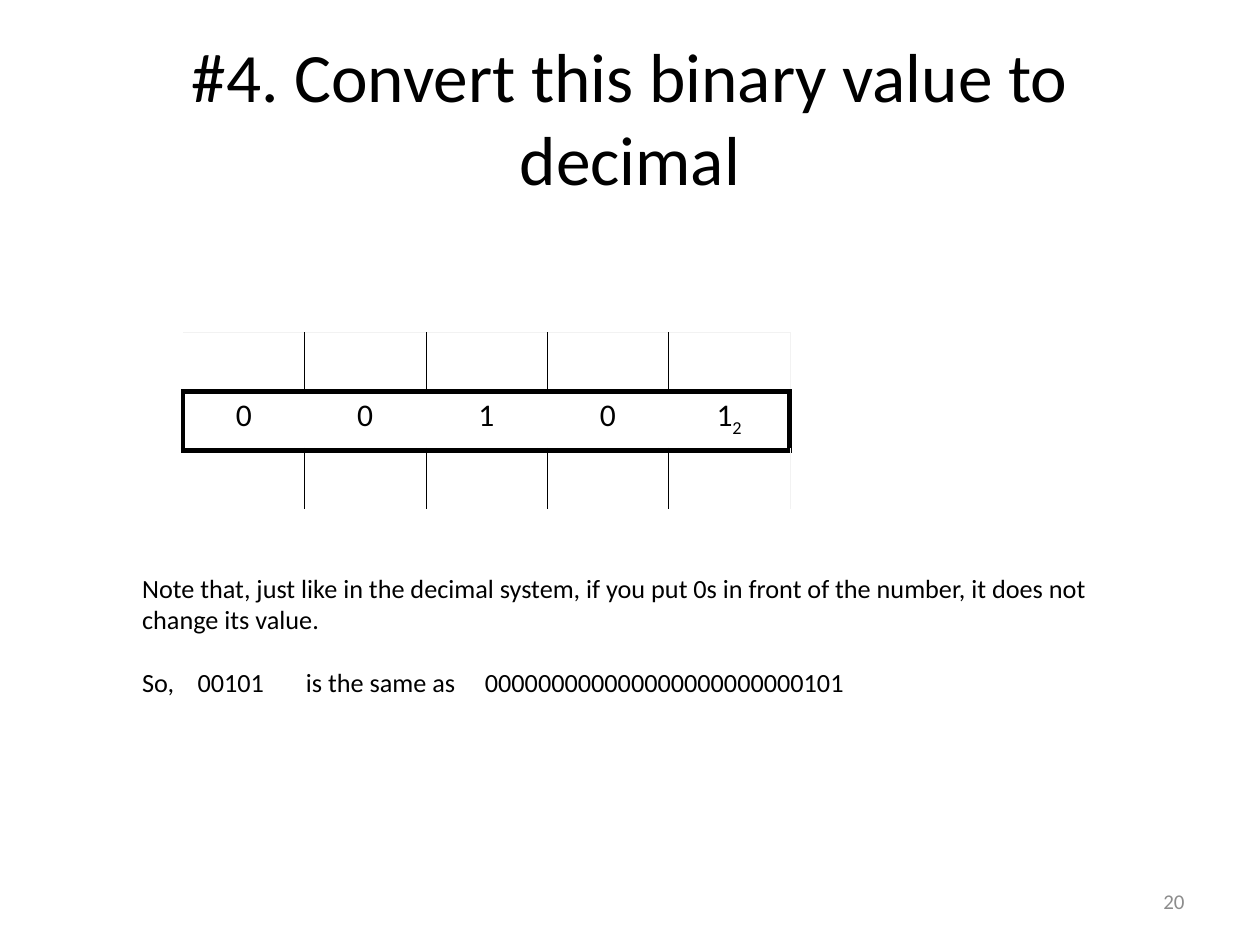
from pptx import Presentation
from pptx.dml.color import RGBColor
from pptx.enum.text import MSO_ANCHOR as Anchor, MSO_AUTO_SIZE as AutoSize, PP_ALIGN as Align
from pptx.oxml.ns import qn
from pptx.util import Inches, Pt
from lxml.etree import SubElement

BLACK = RGBColor(0x00, 0x00, 0x00)
WHITE = RGBColor(0xFF, 0xFF, 0xFF)
PALE = RGBColor(0xF2, 0xF2, 0xF2)
GRAY = RGBColor(0x8C, 0x8C, 0x8C)
FONT = "Calibri"
THIN, THICK = 0.25, 3
DIGITS = "00101"
ROW_COUNT = 3
COLUMN_COUNT = len(DIGITS) + 1
TAB_STOPS = (0.44, 1.3, 2.72)


def set_attributes(target, values):
    for name, value in values.items():
        setattr(target, name, value)


def add_run(paragraph, text, size, color=BLACK):
    run = paragraph.add_run()
    run.text = text
    set_attributes(run.font, {"name": FONT, "size": Pt(size)})
    run.font.color.rgb = color
    return run


def add_text(slide, box, paragraphs, size, color=BLACK, align=Align.LEFT, **frame_format):
    shape = slide.shapes.add_textbox(*map(Inches, box))
    frame = shape.text_frame
    set_attributes(frame, {"word_wrap": True, **frame_format})
    for index, text in enumerate(paragraphs):
        paragraph = frame.add_paragraph() if index else frame.paragraphs[0]
        paragraph.alignment = align
        add_run(paragraph, text, size, color)
    return frame


def add_tab_stops(paragraph, positions):
    tab_list = SubElement(paragraph._p.get_or_add_pPr(), qn("a:tabLst"))
    for position in positions:
        SubElement(tab_list, qn("a:tab"), pos=str(Inches(position)), algn="l")


def set_borders(cell, borders):
    properties = cell._tc.get_or_add_tcPr()
    for side in "LRTB":
        color, width = borders.get(side, (None, THIN))
        line = SubElement(properties, qn(f"a:ln{side}"), w=str(Pt(width)))
        if color is None:
            SubElement(line, qn("a:noFill"))
        else:
            fill = SubElement(line, qn("a:solidFill"))
            SubElement(fill, qn("a:srgbClr"), val=str(color))


def cell_borders(row, column):
    first, last = column == 1, column == COLUMN_COUNT - 1
    thick, thin = (BLACK, THICK), (BLACK, THIN)
    if column == 0:
        return {"R": thick} if row == 1 else {}
    if row == 1:
        borders = {"T": thick, "B": thick}
        if first:
            borders["L"] = thick
        if last:
            borders["R"] = thick
        return borders
    borders = {"R": (PALE, THIN) if last else thin}
    if not first:
        borders["L"] = thin
    if row == 0:
        borders.update(T=(PALE, THIN), B=thick)
    else:
        borders.update(T=thick, B=(WHITE, THIN))
    return borders


def add_binary_table(slide):
    frame = slide.shapes.add_table(
        ROW_COUNT, COLUMN_COUNT, Inches(0.49), Inches(2.64), Inches(5.78), Inches(1.4)
    )
    table = frame.table
    set_attributes(table, {"first_row": False, "horz_banding": False})
    margins = {
        "margin_left": Inches(0.07),
        "margin_right": Inches(0.07),
        "margin_top": Inches(0.04),
        "margin_bottom": Inches(0.04),
    }
    for row in range(ROW_COUNT):
        for column in range(COLUMN_COUNT):
            cell = table.cell(row, column)
            set_attributes(cell, margins)
            set_borders(cell, cell_borders(row, column))
            cell.fill.background()
    for column, digit in enumerate(DIGITS, start=1):
        paragraph = table.cell(1, column).text_frame.paragraphs[0]
        paragraph.alignment = Align.CENTER
        add_run(paragraph, digit, 18)
    base = add_run(paragraph, "2", 18)
    base.font._element.set("baseline", "-25000")


def add_note(slide):
    frame = add_text(
        slide,
        (1.03, 4.49, 8.28, 1.11),
        [
            "Note that, just like in the decimal system, if you put 0s in front of "
            "the number, it does not change its value.",
            "So,\t00101\tis the same as\t000000000000000000000000101",
        ],
        15,
        auto_size=AutoSize.SHAPE_TO_FIT_TEXT,
    )
    example = frame.paragraphs[1]
    example.space_before = Pt(18)
    add_tab_stops(example, TAB_STOPS)


def main():
    presentation = Presentation()
    set_attributes(presentation, {"slide_width": Inches(10), "slide_height": Inches(7.5)})
    slide = presentation.slides.add_slide(presentation.slide_layouts[6])
    add_text(
        slide, (0.5, 0.3, 9, 1.25), ["#4. Convert this binary value to decimal"],
        39.6, align=Align.CENTER, vertical_anchor=Anchor.MIDDLE,
    )
    add_binary_table(slide)
    add_text(
        slide, (7.17, 6.95, 2.33, 0.4), ["20"],
        12, GRAY, Align.RIGHT, vertical_anchor=Anchor.MIDDLE,
    )
    add_note(slide)
    presentation.save("out.pptx")


if __name__ == "__main__":
    main()
